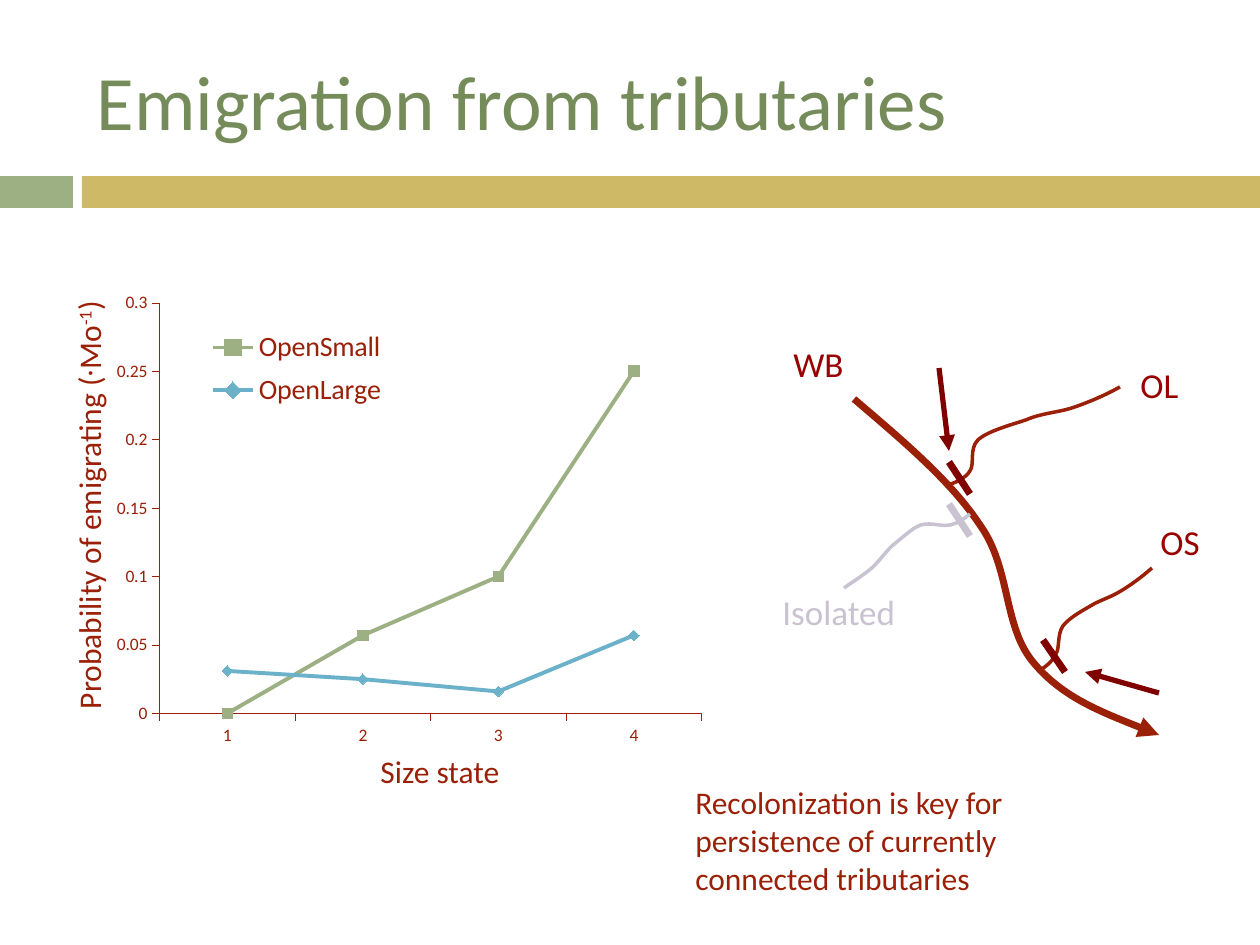
from dataclasses import dataclass
from typing import Optional

from lxml.etree import SubElement
from pptx import Presentation
from pptx.chart.data import CategoryChartData
from pptx.dml.color import RGBColor
from pptx.enum.chart import XL_CHART_TYPE as ChartType, XL_LEGEND_POSITION as LegendPos
from pptx.enum.chart import XL_MARKER_STYLE as Marker, XL_TICK_MARK as Tick
from pptx.enum.shapes import MSO_CONNECTOR as Connector, MSO_SHAPE as Shape
from pptx.enum.text import MSO_ANCHOR as Anchor, MSO_AUTO_SIZE as AutoSize, PP_ALIGN as Align
from pptx.oxml import parse_xml
from pptx.oxml.ns import nsdecls, qn
from pptx.util import Emu, Pt

PX_PER_INCH = 126
FONT = "Calibri"
SAGE = RGBColor(0x9C, 0xB0, 0x84)
GOLD = RGBColor(0xCE, 0xB9, 0x66)
BLUE = RGBColor(0x6B, 0xB1, 0xC9)
OLIVE = RGBColor(0x75, 0x8C, 0x5A)
RUST = RGBColor(0x9A, 0x20, 0x08)
RED = RGBColor(0x99, 0x00, 0x00)
MAROON = RGBColor(0x80, 0x00, 0x00)
LILAC = RGBColor(0xC9, 0xC2, 0xD1)
WHITE = RGBColor(0xFF, 0xFF, 0xFF)


@dataclass
class Run:
    text: str
    font: str = FONT
    raised: bool = False


@dataclass
class Label:
    runs: list[Run]
    box: tuple[int, int, int, int]
    size: int
    color: RGBColor
    rotation: int = 0
    wrap: bool = False


@dataclass
class Stream:
    """A start point, then triples of two control points and an end point."""
    points: list[tuple[int, int]]
    color: RGBColor = RUST
    width: int = 2
    arrow: bool = False


@dataclass
class Stroke:
    start: tuple[int, int]
    end: tuple[int, int]
    color: RGBColor = MAROON
    width: int = 4
    arrow: bool = False


@dataclass
class Series:
    name: str
    values: tuple[float, ...]
    color: RGBColor
    marker: Marker


def px(n: int) -> Emu:
    return Emu(round(n * 914400 / PX_PER_INCH))


def style_font(font, size: int, color: RGBColor, name: str = FONT) -> None:
    font.size, font.name = Pt(size), name
    font.color.rgb = color


def style_line(line, color: RGBColor, width: float, arrow: bool = False) -> None:
    line.color.rgb = color
    line.width = Pt(width)
    if arrow:
        line._get_or_add_ln().append(parse_xml(f'<a:tailEnd {nsdecls("a")} type="triangle"/>'))


def add_bar(shapes, box: tuple[int, int, int, int], color: RGBColor) -> None:
    s = shapes.add_shape(Shape.RECTANGLE, *map(px, box))
    s.shadow.inherit = False
    s.fill.solid()
    s.fill.fore_color.rgb = color
    s.line.fill.background()


def add_label(shapes, label: Label) -> None:
    s = shapes.add_textbox(*map(px, label.box))
    s.rotation = label.rotation
    tf = s.text_frame
    tf.word_wrap = label.wrap
    tf.auto_size = AutoSize.SHAPE_TO_FIT_TEXT
    for run in label.runs:
        r = tf.paragraphs[0].add_run()
        r.text = run.text
        style_font(r.font, label.size, label.color, run.font)
        if run.raised:
            r.font._element.set("baseline", "30000")


def add_stream(shapes, stream: Stream) -> None:
    points = [(px(x), px(y)) for x, y in stream.points]
    builder = shapes.build_freeform(*points[0])
    builder.add_line_segments(points[3::3], close=False)
    s = builder.convert_to_shape()
    # Turn each straight segment into a cubic curve
    for i, segment in enumerate(s._element.xpath(".//a:lnTo")):
        curve = parse_xml(f'<a:cubicBezTo {nsdecls("a")}/>')
        for x, y in points[3 * i + 1:3 * i + 4]:
            SubElement(curve, qn("a:pt"), x=str(x - s.left), y=str(y - s.top))
        segment.getparent().replace(segment, curve)
    s.shadow.inherit = False
    s.fill.background()
    style_line(s.line, stream.color, stream.width, stream.arrow)


def add_stroke(shapes, stroke: Stroke) -> None:
    s = shapes.add_connector(Connector.STRAIGHT, *map(px, stroke.start + stroke.end))
    style_line(s.line, stroke.color, stroke.width, stroke.arrow)
    SubElement(s._element.spPr, qn("a:effectLst"))


def set_layout(parent, x: float, y: float, w: float, h: float, inner: bool = False) -> None:
    """Place a plot area or legend by fractions of the chart."""
    for old in parent.findall(qn("c:layout")):
        parent.remove(old)
    target = '<c:layoutTarget val="inner"/>' if inner else ""
    sizes = "".join(f'<c:{k} val="{v}"/>' for k, v in zip("xywh", (x, y, w, h)))
    layout = parse_xml(
        f'<c:layout {nsdecls("c")}><c:manualLayout>{target}<c:xMode val="edge"/>'
        f'<c:yMode val="edge"/>{sizes}</c:manualLayout></c:layout>')
    parent.insert(0 if inner else 1, layout)


def add_emigration_chart(shapes, box: tuple[int, int, int, int], rows: list[Series]) -> None:
    data = CategoryChartData()
    data.categories = ["1", "2", "3", "4"]
    for row in rows:
        data.add_series(row.name, row.values)
    chart = shapes.add_chart(ChartType.LINE_MARKERS, *map(px, box), data).chart
    style_font(chart.font, 10, RUST)
    chart.has_title = False
    chart.has_legend = True
    legend = chart.legend
    legend.position, legend.include_in_layout = LegendPos.RIGHT, False
    style_font(legend.font, 16, RUST)
    set_layout(legend._element, 0.12, 0.08, 0.24, 0.2)
    plot = chart.plots[0]
    plot.vary_by_categories = False
    set_layout(chart._chartSpace.chart.plotArea, 0.07, 0.04, 0.67, 0.87, inner=True)
    for axis in (chart.category_axis, chart.value_axis):
        axis.major_tick_mark, axis.minor_tick_mark = Tick.OUTSIDE, Tick.NONE
        style_line(axis.format.line, RUST, 0.25)
    value_axis = chart.value_axis
    value_axis.minimum_scale, value_axis.maximum_scale = 0, 0.3
    value_axis.major_unit = 0.05
    style_line(value_axis.major_gridlines.format.line, WHITE, 0.25)
    for series, row in zip(plot.series, rows):
        series.smooth = False
        style_line(series.format.line, row.color, 2.25)
        series.marker.style, series.marker.size = row.marker, 6
        series.marker.format.fill.solid()
        series.marker.format.fill.fore_color.rgb = row.color
        series.marker.format.line.color.rgb = row.color


SERIES = [
    Series("OpenSmall", (0, 0.057, 0.1, 0.25), SAGE, Marker.SQUARE),
    Series("OpenLarge", (0.031, 0.025, 0.016, 0.057), BLUE, Marker.DIAMOND),
]
STREAMS = [
    Stream([(854, 399), (902, 440), (951, 481), (980, 525), (1011, 568), (1003, 626),
            (1033, 662), (1062, 697), (1111, 716), (1159, 735)], width=4, arrow=True),
    Stream([(970, 514), (964, 519), (959, 523), (950, 525), (942, 527), (931, 522),
            (921, 525), (912, 528), (901, 539), (892, 546), (885, 553), (881, 559),
            (873, 567), (864, 575), (854, 581), (844, 588)], LILAC),
    Stream([(1040, 670), (1046, 667), (1052, 662), (1056, 654), (1060, 648), (1057, 635),
            (1063, 626), (1070, 617), (1084, 610), (1094, 604), (1104, 599), (1111, 597),
            (1121, 591), (1131, 585), (1142, 577), (1152, 568)]),
    Stream([(945, 486), (955, 483), (965, 479), (970, 471), (975, 464), (969, 449),
            (978, 440), (988, 431), (1011, 425), (1026, 420), (1042, 413), (1056, 413),
            (1072, 408), (1087, 403), (1104, 396), (1120, 387)]),
]
STROKES = [
    Stroke((970, 536), (949, 504), LILAC),
    Stroke((970, 494), (949, 462)),
    Stroke((1065, 672), (1043, 640)),
    Stroke((1159, 693), (1085, 672), width=3, arrow=True),
    Stroke((939, 368), (949, 451), width=3, arrow=True),
]
LABELS = [
    Label([Run("Probability of emigrating ("), Run("∙", "Times New Roman"), Run("Mo"),
           Run("-1", raised=True), Run(")")], (-136, 472, 449, 50), 18, RUST, rotation=270),
    Label([Run("Size state")], (368, 746, 146, 50), 18, RUST),
    Label([Run("WB")], (781, 336, 77, 54), 20, RED),
    Label([Run("Isolated")], (770, 584, 149, 54), 20, LILAC),
    Label([Run("OL")], (1128, 357, 68, 54), 20, RED),
    Label([Run("OS")], (1148, 514, 69, 54), 20, RED),
    Label([Run("Recolonization is key for persistence of currently connected tributaries")],
          (683, 777, 431, 127), 18, RUST, wrap=True),
]


def main() -> None:
    prs = Presentation()
    prs.slide_width, prs.slide_height = px(1260), px(945)
    slide = prs.slides.add_slide(prs.slide_layouts[5])
    shapes = slide.shapes

    # Title and the band below it
    title = shapes.title
    title.left, title.top, title.width, title.height = map(px, (84, 32, 1124, 136))
    tf = title.text_frame
    tf.vertical_anchor = Anchor.MIDDLE
    p = tf.paragraphs[0]
    p.alignment = Align.LEFT
    r = p.add_run()
    r.text = "Emigration from tributaries"
    style_font(r.font, 44, OLIVE)
    add_bar(shapes, (0, 176, 73, 32), SAGE)
    add_bar(shapes, (82, 176, 1178, 32), GOLD)

    # Chart, stream map and labels
    add_emigration_chart(shapes, (103, 284, 809, 472), SERIES)
    for stream in STREAMS:
        add_stream(shapes, stream)
    for stroke in STROKES:
        add_stroke(shapes, stroke)
    for label in LABELS:
        add_label(shapes, label)
    prs.save("out.pptx")


if __name__ == "__main__":
    main()
